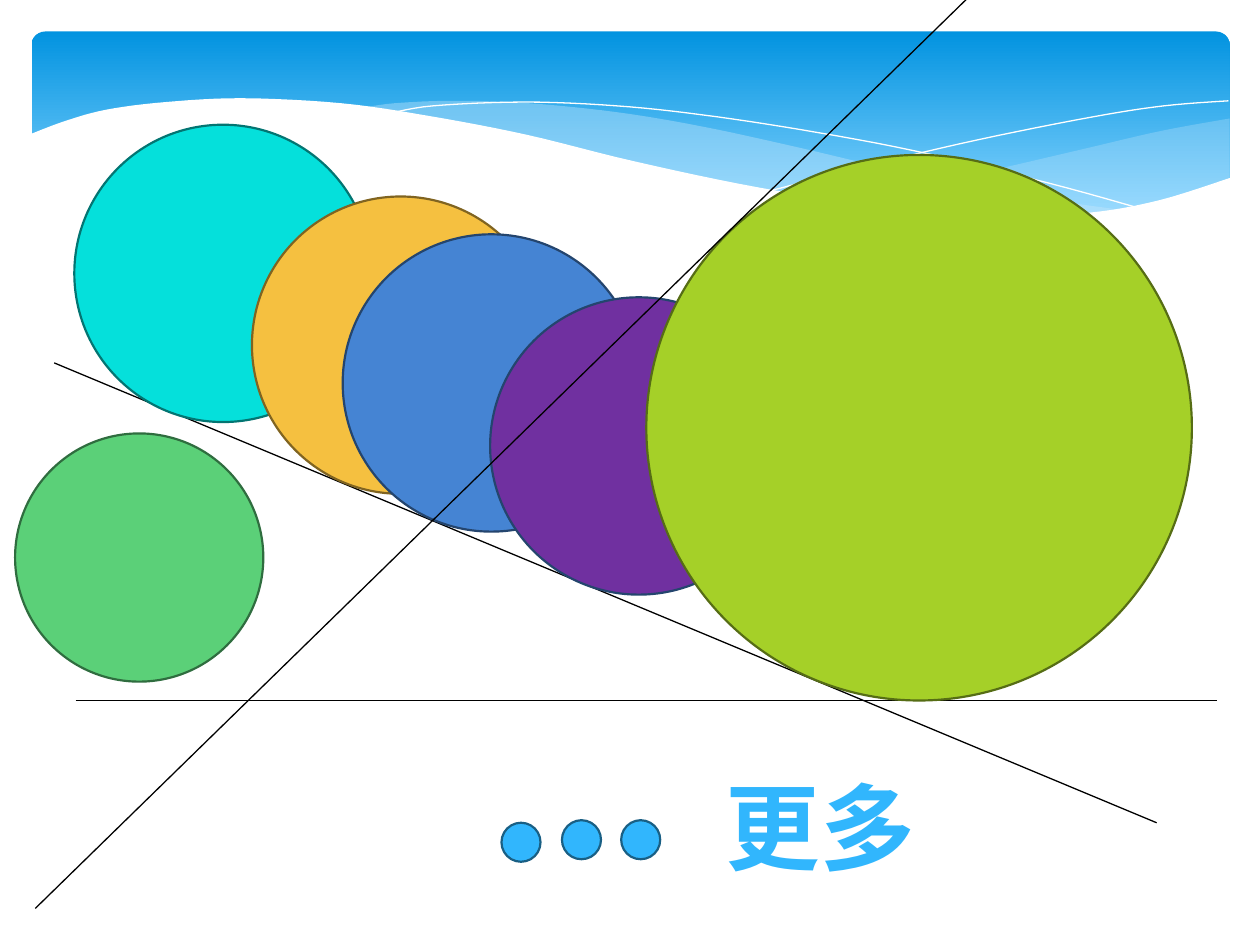
"""Build a slide of overlapping circles and crossing lines under a wave banner."""
from dataclasses import dataclass
from typing import Optional

from lxml.etree import SubElement
from pptx import Presentation
from pptx.dml.color import RGBColor
from pptx.enum.shapes import MSO_CONNECTOR, MSO_SHAPE
from pptx.enum.text import MSO_AUTO_SIZE, PP_ALIGN
from pptx.oxml import parse_xml
from pptx.oxml.ns import nsdecls, qn
from pptx.util import Emu, Pt

PX = 9144
STEPS = 6
Point = tuple[float, float]


@dataclass
class Circle:
    left: int
    top: int
    size: int
    fill: str
    line: str


@dataclass
class Wave:
    edges: list[list[Point]]
    fill: Optional[str] = None
    opacity: int = 100


WAVES = [
    Wave([[(976, 94), (921, 104), (861, 118), (779, 137), (729, 147), (661, 160)],
          [(661, 160), (719, 167), (781, 172), (835, 172), (889, 166), (935, 156), (976, 141)]],
         "C6E7FC", 29),
    Wave([[(893, 167), (837, 159), (741, 142), (629, 116), (555, 100), (489, 89),
           (420, 82), (361, 80), (313, 82), (286, 86)],
          [(286, 86), (342, 94), (404, 106), (491, 126), (584, 146), (650, 158),
           (709, 166), (773, 172), (828, 173), (893, 167)]],
         "C6E7FC", 40),
    Wave([[(309, 90), (344, 84), (416, 81), (489, 84), (556, 91), (636, 103),
           (727, 120), (831, 145), (907, 166)]]),
    Wave([[(613, 151), (695, 130), (776, 111), (866, 93), (924, 84), (975, 80)]]),
    Wave([[(977, 141), (920, 159), (863, 169), (793, 171), (708, 165), (603, 149),
           (503, 128), (418, 107), (340, 92), (271, 82), (193, 78), (132, 81),
           (85, 87), (52, 96), (23, 107)],
          [(23, 224), (977, 224)]], "FFFFFF"),
]
BACK_LINES = [(43, 288, 918, 653), (60, 556, 966, 556)]
FRONT_LINE = (28, 721, 791, -24)
CIRCLES = [
    Circle(59, 99, 236, "05E0DB", "037572"),
    Circle(12, 344, 197, "5BD078", "2F6D3F"),
    Circle(200, 156, 236, "F5C040", "806421"),
    Circle(272, 186, 236, "4584D3", "24456E"),
    Circle(389, 236, 236, "7030A0", "24456E"),
    Circle(513, 123, 433, "A5D028", "566D15"),
]
DOTS = [Circle(left, top, 31, "31B6FD", "195F84")
        for left, top in ((398, 653), (493, 651), (446, 651))]


def px(*lengths: float) -> list[Emu]:
    """Turn px lengths into EMU."""
    return [Emu(round(length * PX)) for length in lengths]


def colour(value: str) -> RGBColor:
    """Turn a hex string into a colour."""
    return RGBColor.from_string(value)


def paint(shape, fill: Optional[str], line: Optional[str], width: float = 0) -> None:
    """Give a shape a plain fill and line and no shadow."""
    shape.shadow.inherit = False
    for style, value in ((shape.fill, fill), (shape.line.fill, line)):
        if value:
            style.solid()
            style.fore_color.rgb = colour(value)
        else:
            style.background()
    if line:
        shape.line.width = Pt(width)


def smooth(knots: list[Point]) -> list[Point]:
    """Sample a Catmull-Rom curve through the knots."""
    padded = [knots[0], *knots, knots[-1]]
    points = [knots[0]]
    for a, b, c, d in zip(padded, padded[1:], padded[2:], padded[3:]):
        for step in range(1, STEPS + 1):
            t = step / STEPS
            points.append(tuple(
                q + t * (r - p) / 2 + t * t * (2 * p - 5 * q + 4 * r - s) / 2
                + t ** 3 * (3 * q - p - 3 * r + s) / 2
                for p, q, r, s in zip(a, b, c, d)))
    return points


def draw_banner(page) -> None:
    """Draw the rounded gradient banner."""
    banner = page.shapes.add_shape(MSO_SHAPE.ROUNDED_RECTANGLE, *px(25, 25, 951, 156))
    banner.adjustments[0] = 0.07
    paint(banner, None, None)
    banner.fill.gradient()
    banner.fill.gradient_angle = 270
    stops = ((0, "0293E0"), (0.9, "83D3FE"))
    for stop, (position, value) in zip(banner.fill.gradient_stops, stops):
        stop.position = position
        stop.color.rgb = colour(value)


def draw_wave(page, wave: Wave) -> None:
    """Draw a filled wave, or a white hairline when it has no fill."""
    start, *rest = [px(*point) for edge in wave.edges for point in smooth(edge)]
    builder = page.shapes.build_freeform(*start)
    builder.add_line_segments(rest, close=bool(wave.fill))
    shape = builder.convert_to_shape()
    paint(shape, wave.fill, None if wave.fill else "FFFFFF")
    if wave.opacity < 100:
        tint = shape.element.spPr.find(qn("a:solidFill"))[0]
        SubElement(tint, qn("a:alpha")).set("val", str(wave.opacity * 1000))


def draw_circle(page, circle: Circle) -> None:
    """Draw an outlined circle."""
    place = px(circle.left, circle.top, circle.size, circle.size)
    shape = page.shapes.add_shape(MSO_SHAPE.OVAL, *place)
    paint(shape, circle.fill, circle.line, 1.25)


def draw_line(page, ends: tuple[int, int, int, int]) -> None:
    """Draw a thin black line."""
    line = page.shapes.add_connector(MSO_CONNECTOR.STRAIGHT, *px(*ends))
    line.line.color.rgb = colour("000000")
    line.line.width = Pt(0.75)
    SubElement(line.element.spPr, qn("a:effectLst"))


def draw_more(page) -> None:
    """Write the outlined word beside the dots."""
    box = page.shapes.add_textbox(*px(565, 605, 172, 101))
    box.line.color.rgb = colour("FFFFFF")
    box.line.width = Pt(0.75)
    frame = box.text_frame
    frame.word_wrap = False
    frame.auto_size = MSO_AUTO_SIZE.SHAPE_TO_FIT_TEXT
    para = frame.paragraphs[0]
    para.alignment = PP_ALIGN.CENTER
    span = para.add_run()
    span.text = "更多"
    for name, value in {"size": Pt(54), "bold": True, "name": "Cabin"}.items():
        setattr(span.font, name, value)
    span.font.color.rgb = colour("31B6FD")
    span.font._element.insert(0, parse_xml(
        f'<a:ln {nsdecls("a")} w="12700"><a:solidFill>'
        '<a:srgbClr val="003D8E"/></a:solidFill></a:ln>'))


def main() -> None:
    """Build and save the deck."""
    deck = Presentation()
    deck.slide_width, deck.slide_height = px(1000, 750)
    page = deck.slides.add_slide(deck.slide_layouts[6])
    draw_banner(page)
    for wave in WAVES:
        draw_wave(page, wave)
    for ends in BACK_LINES:
        draw_line(page, ends)
    for circle in CIRCLES:
        draw_circle(page, circle)
    draw_line(page, FRONT_LINE)
    for dot in DOTS:
        draw_circle(page, dot)
    draw_more(page)
    deck.save("out.pptx")


if __name__ == "__main__":
    main()
